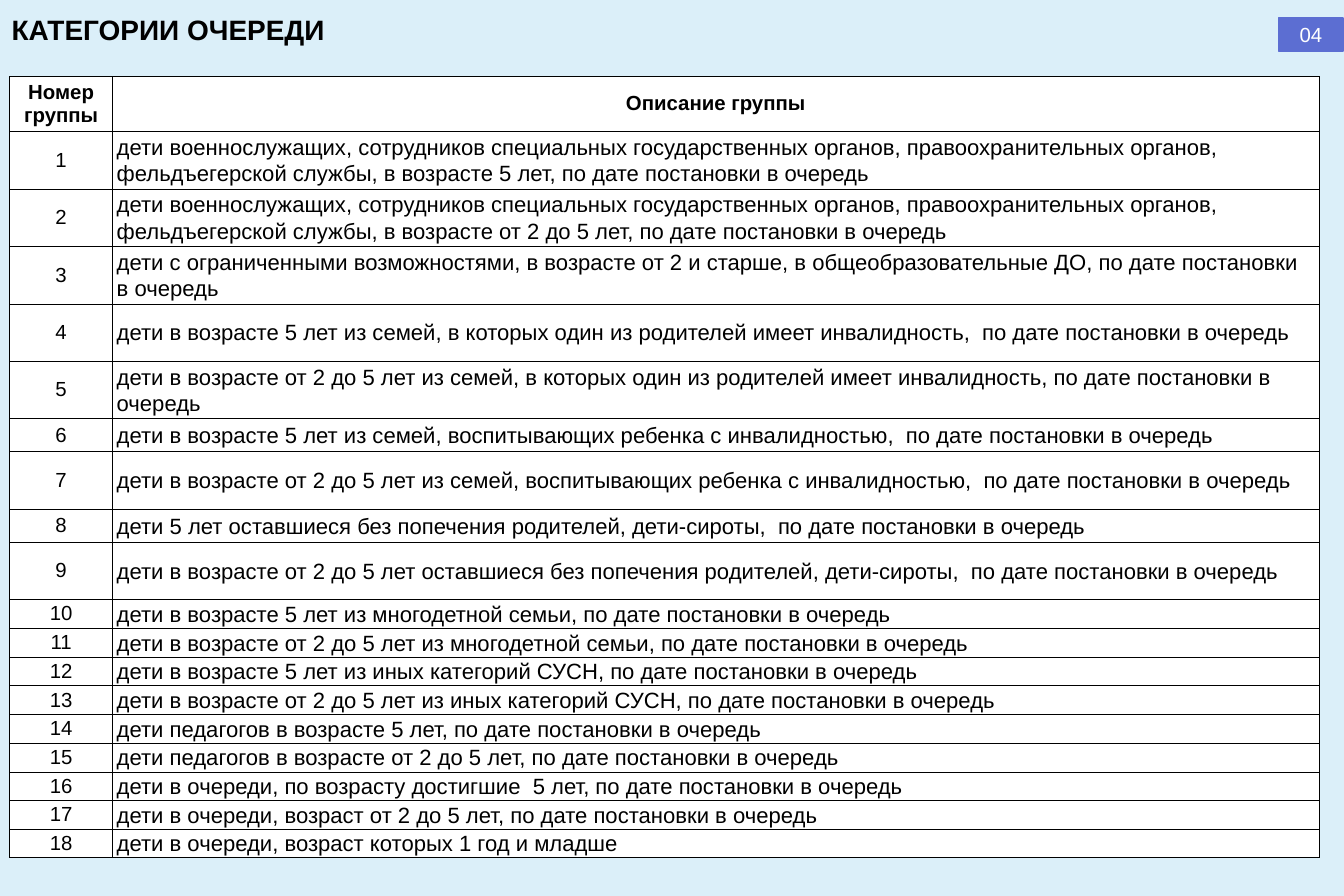
from lxml.etree import SubElement
from pptx import Presentation
from pptx.dml.color import RGBColor
from pptx.enum.shapes import MSO_SHAPE
from pptx.enum.text import MSO_ANCHOR, PP_ALIGN
from pptx.oxml.ns import qn
from pptx.util import Inches, Pt

TITLE = "КАТЕГОРИИ ОЧЕРЕДИ"
PAGE_NUMBER = "04"
HEADERS = ("Номер группы", "Описание группы")
HEADER_HEIGHT, TALL, MEDIUM, LOW = 0.9, 0.94, 0.54, 0.47
GROUPS = [
    (TALL, "дети военнослужащих, сотрудников специальных государственных органов, правоохранительных органов, "
           "фельдъегерской службы, в возрасте 5 лет, по дате постановки в очередь"),
    (TALL, "дети военнослужащих, сотрудников специальных государственных органов, правоохранительных органов, "
           "фельдъегерской службы, в возрасте от 2 до 5 лет, по дате постановки в очередь"),
    (TALL, "дети с ограниченными возможностями, в возрасте от 2 и старше, в общеобразовательные ДО, "
           "по дате постановки в очередь"),
    (TALL, "дети в возрасте 5 лет из семей, в которых один из родителей имеет инвалидность,  "
           "по дате постановки в очередь"),
    (TALL, "дети в возрасте от 2 до 5 лет из семей, в которых один из родителей имеет инвалидность, "
           "по дате постановки в очередь"),
    (MEDIUM, "дети в возрасте 5 лет из семей, воспитывающих ребенка с инвалидностью,  по дате постановки в очередь"),
    (TALL, "дети в возрасте от 2 до 5 лет из семей, воспитывающих ребенка с инвалидностью,  "
           "по дате постановки в очередь"),
    (MEDIUM, "дети 5 лет оставшиеся без попечения родителей, дети-сироты,  по дате постановки в очередь"),
    (TALL, "дети в возрасте от 2 до 5 лет оставшиеся без попечения родителей, дети-сироты,  "
           "по дате постановки в очередь"),
    (LOW, "дети в возрасте 5 лет из многодетной семьи, по дате постановки в очередь"),
    (LOW, "дети в возрасте от 2 до 5 лет из многодетной семьи, по дате постановки в очередь"),
    (LOW, "дети в возрасте 5 лет из иных категорий СУСН, по дате постановки в очередь"),
    (LOW, "дети в возрасте от 2 до 5 лет из иных категорий СУСН, по дате постановки в очередь"),
    (LOW, "дети педагогов в возрасте 5 лет, по дате постановки в очередь"),
    (LOW, "дети педагогов в возрасте от 2 до 5 лет, по дате постановки в очередь"),
    (LOW, "дети в очереди, по возрасту достигшие  5 лет, по дате постановки в очередь"),
    (LOW, "дети в очереди, возраст от 2 до 5 лет, по дате постановки в очередь"),
    (LOW, "дети в очереди, возраст которых 1 год и младше"),
]
COLUMN_WIDTHS = (1.68, 19.74)
THIN, THICK = 0.5, 1

BACKGROUND = RGBColor(0xDB, 0xEF, 0xF9)
ACCENT = RGBColor(0x5C, 0x6E, 0xD2)
BLACK = RGBColor(0, 0, 0)
WHITE = RGBColor(0xFF, 0xFF, 0xFF)


def format_text(paragraph, size, color=BLACK, bold=False, align=PP_ALIGN.LEFT):
    paragraph.alignment = align
    font = paragraph.runs[0].font
    font.name, font.size, font.bold = "Arial", Pt(size), bold
    font.color.rgb = color


def set_borders(cell, widths):
    """Draw the left, right, top and bottom borders, with widths in points."""
    properties = cell._tc.get_or_add_tcPr()
    for side, width in zip("LRTB", widths):
        line = SubElement(properties, qn(f"a:ln{side}"), w=str(Pt(width)))
        fill = SubElement(line, qn("a:solidFill"))
        SubElement(fill, qn("a:srgbClr"), val=str(BLACK))


def fill_cell(cell, text, row, column, last_row):
    is_header = row == 0
    is_description = column == 1 and not is_header
    set_borders(cell, (
        THICK if column == 0 else THIN,
        THIN,
        THICK if row <= 1 else THIN,
        THICK if row in (0, last_row) else THIN,
    ))
    cell.fill.solid()
    cell.fill.fore_color.rgb = WHITE
    cell.vertical_anchor = MSO_ANCHOR.MIDDLE
    cell.margin_top = cell.margin_bottom = 0
    cell.margin_left = cell.margin_right = Inches(0.07 if is_description else 0)
    cell.text_frame.text = text
    paragraph = cell.text_frame.paragraphs[0]
    if is_description:
        paragraph.line_spacing = 1.07
        format_text(paragraph, 26)
    else:
        format_text(paragraph, 24, bold=is_header, align=PP_ALIGN.CENTER)


def add_title(slide):
    box = slide.shapes.add_textbox(Inches(0.09), Inches(0.15), Inches(22.09), Inches(0.66))
    box.text_frame.word_wrap = True
    box.text_frame.text = TITLE
    format_text(box.text_frame.paragraphs[0], 33, bold=True)


def add_groups_table(slide):
    heights = [HEADER_HEIGHT] + [height for height, _ in GROUPS]
    rows = [HEADERS] + [(str(number), text) for number, (_, text) in enumerate(GROUPS, 1)]
    table = slide.shapes.add_table(
        len(rows), len(HEADERS), Inches(0.16), Inches(1.25),
        Inches(sum(COLUMN_WIDTHS)), Inches(sum(heights))).table
    table.first_row = table.horz_banding = False
    for column, width in zip(table.columns, COLUMN_WIDTHS):
        column.width = Inches(width)
    for row, (height, texts) in enumerate(zip(heights, rows)):
        table.rows[row].height = Inches(height)
        for column, text in enumerate(texts):
            fill_cell(table.cell(row, column), text, row, column, len(GROUPS))


def add_page_number(slide):
    badge = slide.shapes.add_shape(
        MSO_SHAPE.RECTANGLE, Inches(20.92), Inches(0.3), Inches(1.06), Inches(0.54))
    badge.shadow.inherit = False
    badge.fill.solid()
    badge.fill.fore_color.rgb = ACCENT
    badge.line.color.rgb = ACCENT
    badge.line.width = Pt(2)
    badge.text_frame.vertical_anchor = MSO_ANCHOR.MIDDLE
    badge.text_frame.text = PAGE_NUMBER
    format_text(badge.text_frame.paragraphs[0], 24, WHITE, align=PP_ALIGN.CENTER)


def main():
    presentation = Presentation()
    presentation.slide_width, presentation.slide_height = Inches(21.99), Inches(14.66)
    slide = presentation.slides.add_slide(presentation.slide_layouts[6])
    slide.background.fill.solid()
    slide.background.fill.fore_color.rgb = BACKGROUND
    add_title(slide)
    add_groups_table(slide)
    add_page_number(slide)
    presentation.save("out.pptx")


if __name__ == "__main__":
    main()
